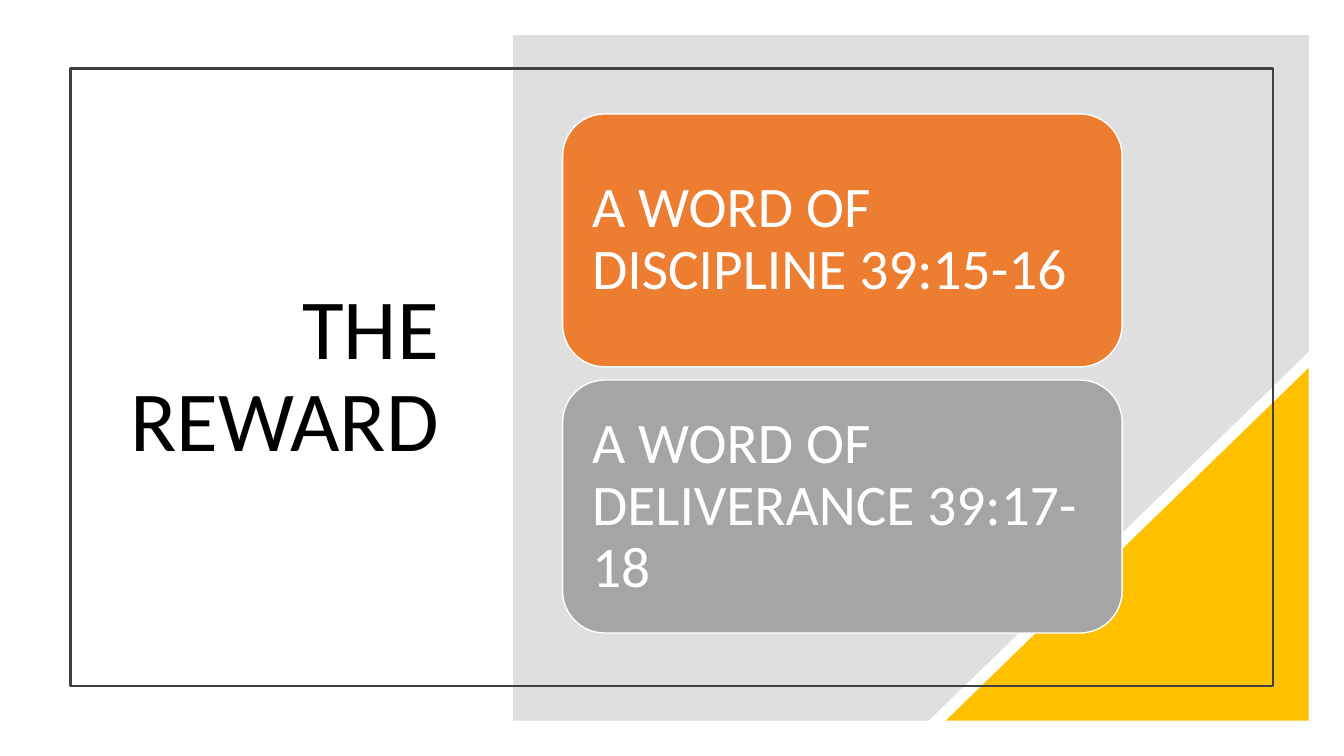
from lxml import etree
from pptx import Presentation
from pptx.dml.color import RGBColor
from pptx.enum.shapes import MSO_SHAPE
from pptx.enum.text import MSO_ANCHOR, PP_ALIGN
from pptx.oxml.ns import qn
from pptx.util import Pt

RECTANGLE = MSO_SHAPE.RECTANGLE
ROUNDED = MSO_SHAPE.ROUNDED_RECTANGLE
TRIANGLE = MSO_SHAPE.RIGHT_TRIANGLE
MIDDLE = MSO_ANCHOR.MIDDLE
LEFT, RIGHT = PP_ALIGN.LEFT, PP_ALIGN.RIGHT

EMU_PER_PX = 9144  # 100 px to the inch
FONT = "Calibri"
COLORS = {
    "black": "000000",
    "white": "FFFFFF",
    "panel": "808080",
    "corner": "FFC000",
    "frame": "404040",
    "discipline": "ED7D31",
    "deliverance": "A5A5A5",
}


def px(length):
    return length * EMU_PER_PX


def color(name):
    return RGBColor.from_string(COLORS[name])


def style(shape, fill=None, line=None, width=1):
    shape.shadow.inherit = False
    if fill:
        shape.fill.solid()
        shape.fill.fore_color.rgb = color(fill)
    else:
        shape.fill.background()
    if line:
        shape.line.color.rgb = color(line)
        shape.line.width = Pt(width)
    else:
        shape.line.fill.background()


def add_box(slide, kind, box, **look):
    shape = slide.shapes.add_shape(kind, *map(px, box))
    style(shape, **look)
    return shape


def write(shape, text, size, ink, align=LEFT, inset_x=10, inset_y=5):
    frame = shape.text_frame
    frame.word_wrap = True
    frame.vertical_anchor = MIDDLE
    frame.margin_left = frame.margin_right = px(inset_x)
    frame.margin_top = frame.margin_bottom = px(inset_y)
    paragraph = frame.paragraphs[0]
    paragraph.alignment = align
    paragraph.line_spacing = 0.9
    run = paragraph.add_run()
    run.text = text
    run.font.name = FONT
    run.font.size = Pt(size)
    run.font.color.rgb = color(ink)


def add_panel(slide, points, fill, opacity):
    start, *rest = points
    builder = slide.shapes.build_freeform(*start, scale=EMU_PER_PX)
    builder.add_line_segments(rest, close=True)
    panel = builder.convert_to_shape()
    style(panel, fill=fill)
    tint = panel._element.spPr.find(qn("a:solidFill"))[0]
    etree.SubElement(tint, qn("a:alpha")).set("val", str(opacity * 1000))


def add_corner(slide, box, fill):
    corner = add_box(slide, TRIANGLE, box, fill=fill)
    corner._element.spPr.find(qn("a:xfrm")).set("flipH", "1")


def add_card(slide, box, text, fill):
    card = add_box(slide, ROUNDED, box, fill=fill, line="white")
    write(card, text, size=41, ink="white", inset_x=17, inset_y=17)


def main():
    prs = Presentation()
    prs.slide_width, prs.slide_height = px(1333), px(750)
    slide = prs.slides.add_slide(prs.slide_layouts[6])

    # Title
    title = slide.shapes.add_textbox(*map(px, (110, 130, 335, 490)))
    write(title, "THE REWARD", size=61, ink="black", align=RIGHT)

    # Grey panel with its cut corner, and the outline over both
    panel_outline = [(509, 35), (1298, 35), (1298, 349), (921, 715), (509, 715)]
    add_panel(slide, panel_outline, "panel", opacity=25)
    add_corner(slide, (938, 365, 360, 350), "corner")
    add_box(slide, RECTANGLE, (70, 68, 1193, 613), line="frame", width=1.5)

    # Stacked cards
    cards = [
        ("A WORD OF DISCIPLINE 39:15-16", "discipline"),
        ("A WORD OF DELIVERANCE 39:17-18", "deliverance"),
    ]
    card_height, gap = 251, 13
    for row, (text, fill) in enumerate(cards):
        top = 113 + row * (card_height + gap)
        add_card(slide, (558, top, 555, card_height), text, fill)

    prs.save("out.pptx")


if __name__ == "__main__":
    main()
